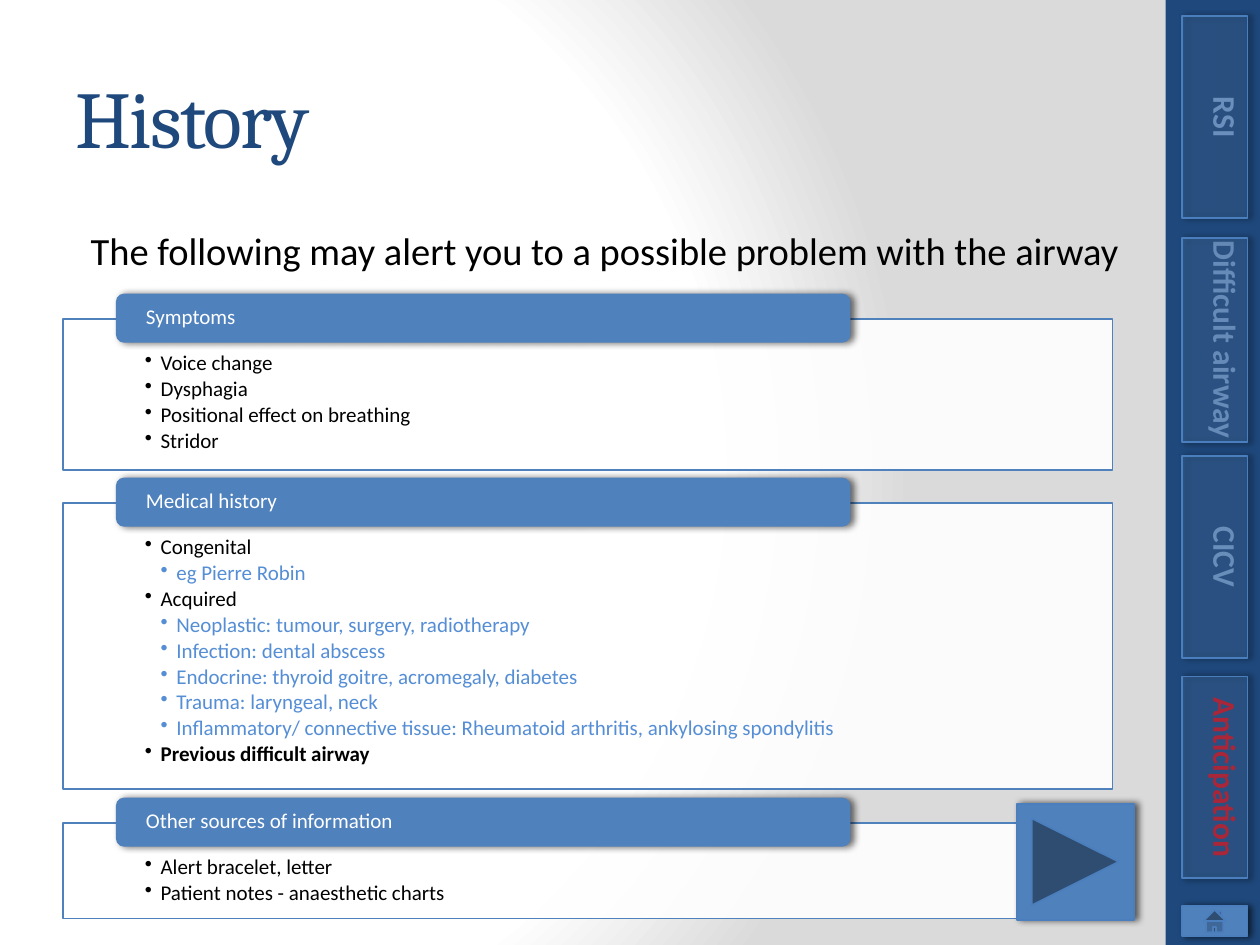
import pptx
import pptx.util
import pptx.oxml
import pptx.dml.color
import pptx.enum.shapes
import pptx.enum.text
from dataclasses import dataclass

Inches = pptx.util.Inches
Pt = pptx.util.Pt
SHAPE = pptx.enum.shapes.MSO_SHAPE
ANCHOR = pptx.enum.text.MSO_ANCHOR
ALIGN = pptx.enum.text.PP_ALIGN
RGB = pptx.dml.color.RGBColor.from_string
NS = 'xmlns:a="http://schemas.openxmlformats.org/drawingml/2006/main"'
NS_P = 'xmlns:p="http://schemas.openxmlformats.org/presentationml/2006/main"'


@dataclass
class Theme:
    navy: str = "1F497D"
    blue: str = "4F81BD"
    edge: str = "4B7EBC"
    detail: str = "558ED5"
    tab: str = "8EB4E3"
    current: str = "FF0000"
    white: str = "FFFFFF"
    grey: str = "DADADA"
    black: str = "000000"
    heading: str = "Cambria"
    body: str = "Calibri"
    title_size: int = 46
    intro_size: int = 22
    tab_size: int = 18
    card_size: int = 12


theme = Theme()


def decorate(shape, fill, line=None, alpha=100, shadow=False):
    shape.fill.solid()
    shape.fill.fore_color.rgb = RGB(fill)
    if alpha < 100:
        shape.element.spPr.find(".//" + pptx.oxml.ns.qn("a:srgbClr")).append(
            pptx.oxml.parse_xml(f'<a:alpha {NS} val="{alpha * 1000}"/>'))
    if line:
        shape.line.color.rgb = RGB(line)
        shape.line.width = Pt(1)
    else:
        shape.line.fill.background()
    shape.shadow.inherit = False
    if shadow:
        shape.element.spPr.find(pptx.oxml.ns.qn("a:effectLst")).append(pptx.oxml.parse_xml(
            f'<a:outerShdw {NS} blurRad="{Pt(4)}" dist="{Pt(2)}" dir="0">'
            f'<a:srgbClr val="{theme.black}"><a:alpha val="60000"/></a:srgbClr></a:outerShdw>'))


def write(paragraph, text, size, color, face=theme.body, bold=False, align=ALIGN.LEFT):
    paragraph.text = text
    paragraph.alignment = align
    paragraph.font.size = Pt(size)
    paragraph.font.name = face
    paragraph.font.bold = bold
    paragraph.font.color.rgb = RGB(color)


deck = pptx.Presentation()
deck.slide_width, deck.slide_height = Inches(10), Inches(7.5)
slide = deck.slides.add_slide(deck.slide_layouts[1])
shapes = slide.shapes

stops = "".join(f'<a:gs pos="{position * 1000}"><a:srgbClr val="{color}"/></a:gs>'
                for position, color in ((0, theme.white), (75, theme.white), (100, theme.grey)))
slide.element.cSld.insert(0, pptx.oxml.parse_xml(
    f'<p:bg {NS} {NS_P}><p:bgPr><a:gradFill rotWithShape="1"><a:gsLst>{stops}</a:gsLst>'
    '<a:path path="circle"><a:fillToRect l="20000" t="50000" r="100000" b="50000"/></a:path>'
    '</a:gradFill><a:effectLst/></p:bgPr></p:bg>'))

sidebar = shapes.add_shape(SHAPE.RECTANGLE, Inches(9.25), 0, Inches(0.75), Inches(7.5))
decorate(sidebar, theme.navy)

title = shapes.title
title.left, title.top, title.width, title.height = map(Inches, (0.5, 0.3, 8.33, 1.25))
title.text_frame.vertical_anchor = ANCHOR.MIDDLE
heading = title.text_frame.paragraphs[0]
write(heading, "History", theme.title_size, theme.navy, theme.heading)
heading.font._element.set("spc", "-100")

intro = slide.placeholders[1]
intro.left, intro.top, intro.width, intro.height = map(Inches, (0.5, 1.75, 8.65, 5.25))
intro.text_frame.auto_size = pptx.enum.text.MSO_AUTO_SIZE.NONE
sentence = intro.text_frame.paragraphs[0]
intro_format = sentence._p.get_or_add_pPr()
intro_format.set("marL", str(Inches(0.12)))
intro_format.set("indent", "0")
intro_format.append(pptx.oxml.parse_xml(f"<a:buNone {NS}/>"))
write(sentence, "The following may alert you to a possible problem with the airway",
      theme.intro_size, theme.black)

cards = [
    ("Symptoms", 2.53, 1.2, [
        (1, "Voice change"), (1, "Dysphagia"),
        (1, "Positional effect on breathing"), (1, "Stridor")]),
    ("Medical history", 3.99, 2.27, [
        (1, "Congenital"), (2, "eg Pierre Robin"), (1, "Acquired"),
        (2, "Neoplastic: tumour, surgery, radiotherapy"),
        (2, "Infection: dental abscess"),
        (2, "Endocrine: thyroid goitre, acromegaly, diabetes"),
        (2, "Trauma: laryngeal, neck"),
        (2, "Inflammatory/ connective tissue: Rheumatoid arthritis, ankylosing spondylitis"),
        (1, "Previous difficult airway")]),
    ("Other sources of information", 6.53, 0.76, [
        (1, "Alert bracelet, letter"), (1, "Patient notes - anaesthetic charts")]),
]
for name, top, height, findings in cards:
    card = shapes.add_shape(SHAPE.RECTANGLE, Inches(0.5), Inches(top), Inches(8.33), Inches(height))
    decorate(card, theme.white, theme.blue, alpha=90)
    content = card.text_frame
    content.word_wrap = True
    content.vertical_anchor = ANCHOR.TOP
    content.margin_left = content.margin_right = Inches(0.65)
    content.margin_top, content.margin_bottom = Inches(0.27), Inches(0.09)
    for index, (level, finding) in enumerate(findings):
        item = content.add_paragraph() if index else content.paragraphs[0]
        item.level = level
        item.line_spacing = 0.9
        item.space_after = Pt(1.8)
        item_format = item._p.get_or_add_pPr()
        item_format.set("marL", str(Inches(0.125 * level)))
        item_format.set("indent", str(Inches(-0.125)))
        item_format.append(pptx.oxml.parse_xml(f'<a:buChar {NS} char="•"/>'))
        write(item, finding, theme.card_size, theme.black if level == 1 else theme.detail,
              bold=finding.startswith("Previous"))

    header = shapes.add_shape(SHAPE.ROUNDED_RECTANGLE, Inches(0.92), Inches(top - 0.2),
                              Inches(5.83), Inches(0.39))
    decorate(header, theme.blue, shadow=True)
    header.text_frame.word_wrap = True
    header.text_frame.vertical_anchor = ANCHOR.MIDDLE
    header.text_frame.margin_left = header.text_frame.margin_right = Inches(0.22)
    header.text_frame.margin_top = header.text_frame.margin_bottom = 0
    header.text_frame.paragraphs[0].line_spacing = 0.9
    write(header.text_frame.paragraphs[0], name, theme.card_size, theme.white)

tabs = [
    ("RSI", 0.13, 1.6, 0.13, 1.6, 28, theme.tab),
    ("Difficult airway", 1.79, 1.81, 1.89, 1.62, 33, theme.tab),
    ("CICV", 3.6, 1.64, 3.62, 1.6, 30, theme.tab),
    ("Anticipation", 5.37, 1.6, 5.37, 1.6, 30, theme.current),
]
for name, label_top, label_height, top, height, alpha, color in tabs:
    label = shapes.add_textbox(Inches(9.38), Inches(label_top), Inches(0.5), Inches(label_height))
    label.text_frame.word_wrap = True
    label.text_frame.margin_left = label.text_frame.margin_right = 0
    label.element.txBody.bodyPr.set("vert", "vert")
    write(label.text_frame.paragraphs[0], name, theme.tab_size, color, bold=True, align=ALIGN.CENTER)
    button = shapes.add_shape(SHAPE.ACTION_BUTTON_CUSTOM, Inches(9.38), Inches(top),
                              Inches(0.52), Inches(height))
    decorate(button, theme.blue, theme.edge, alpha, shadow=True)

for kind, left, top, width, height in (
        (SHAPE.ACTION_BUTTON_HOME, 9.38, 7.19, 0.52, 0.24),
        (SHAPE.ACTION_BUTTON_FORWARD_OR_NEXT, 8.07, 6.38, 0.93, 0.92)):
    navigation = shapes.add_shape(kind, Inches(left), Inches(top), Inches(width), Inches(height))
    decorate(navigation, theme.blue, theme.edge, shadow=True)

deck.save("out.pptx")
